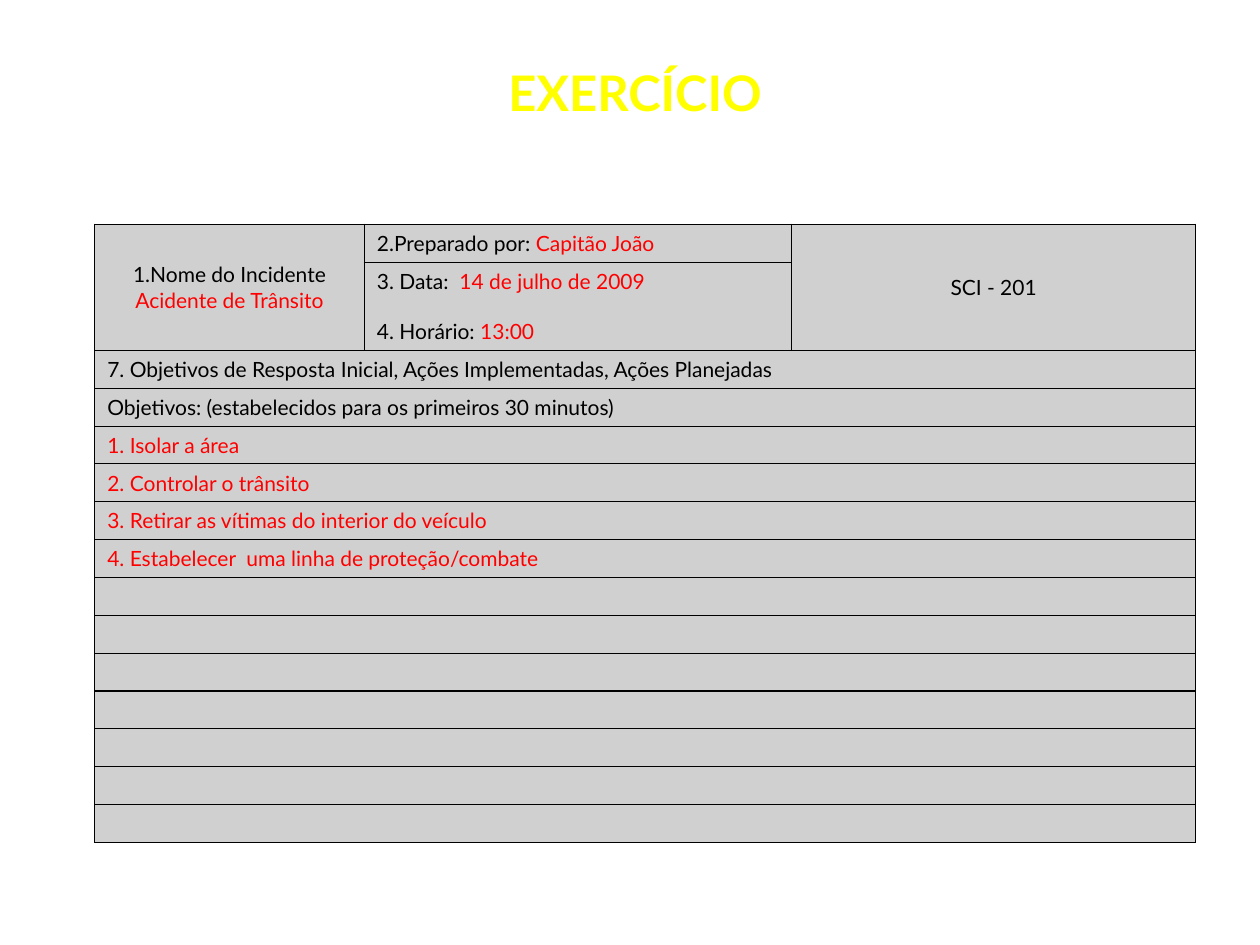
from lxml import etree
from pptx import Presentation
from pptx import util as u
from pptx.dml import color as dml
from pptx.enum import text
from pptx.oxml import ns

COLORS = {"title": "FFFF00", "label": "000000", "answer": "FF0000",
          "cell": "D0D0D0", "border": "000000"}
FONT = "Lato"
ROW_HEIGHT = 0.762
DATE_ROW_HEIGHT = 1.78
COLUMN_SHARES = (2.14, 3.39, 3.21)
ROW_COUNT = 15
HEADER_ROWS = 2

INCIDENT = [[("1.Nome do Incidente", "label")], [("Acidente de Trânsito", "answer")]]
AUTHOR = [[("2.Preparado por: ", "label"), ("Capitão João", "answer")]]
SCHEDULE = [[("3. Data:  ", "label"), ("14 de julho de 2009", "answer")],
            [("4. Horário: ", "label"), ("13:00", "answer")]]
FORM_CODE = [[("SCI - 201", "label")]]
BODY_LINES = [
    ("7. Objetivos de Resposta Inicial, Ações Implementadas, Ações Planejadas", "label"),
    ("Objetivos: (estabelecidos para os primeiros 30 minutos)", "label"),
    ("1. Isolar a área", "answer"),
    ("2. Controlar o trânsito", "answer"),
    ("3. Retirar as vítimas do interior do veículo", "answer"),
    ("4. Estabelecer  uma linha de proteção/combate", "answer"),
]


def add_run(paragraph, wording, size, role, bold=False):
    """Add one formatted run to a paragraph."""
    run = paragraph.add_run()
    run.text = wording
    run.font.name = FONT
    run.font.size = u.Pt(size)
    run.font.bold = bold
    run.font.color.rgb = dml.RGBColor.from_string(COLORS[role])


def style_cell(cell):
    """Give a cell its borders, grey fill and the text size of an empty line."""
    properties = cell._tc.get_or_add_tcPr()
    for side in ("lnL", "lnR", "lnT", "lnB"):
        line = etree.SubElement(properties, ns.qn(f"a:{side}"), w=str(u.Pt(0.75)))
        paint = etree.SubElement(line, ns.qn("a:solidFill"))
        etree.SubElement(paint, ns.qn("a:srgbClr"), val=COLORS["border"])
    cell.fill.solid()
    cell.fill.fore_color.rgb = dml.RGBColor.from_string(COLORS["cell"])
    ending = etree.SubElement(cell.text_frame.paragraphs[0]._p,
                              ns.qn("a:endParaRPr"), sz="1200")
    etree.SubElement(ending, ns.qn("a:latin"), typeface=FONT)


def write_cell(cell, lines, align=text.PP_ALIGN.LEFT, anchor=text.MSO_ANCHOR.MIDDLE, gap=0):
    """Write lines of coloured runs, with a gap in points between them."""
    cell.vertical_anchor = anchor
    for index, runs in enumerate(lines):
        frame = cell.text_frame
        paragraph = frame.add_paragraph() if index else frame.paragraphs[0]
        paragraph.alignment = align
        if index:
            paragraph.space_before = u.Pt(gap)
        for wording, role in runs:
            add_run(paragraph, wording, 12, role)


def place_title(slide, left, top, width, height):
    """Move the title placeholder into its box and write the heading."""
    title = slide.shapes.title
    title.left, title.top, title.width, title.height = map(u.Cm, (left, top, width, height))
    title.text_frame.auto_size = text.MSO_AUTO_SIZE.SHAPE_TO_FIT_TEXT
    heading = title.text_frame.paragraphs[0]
    heading.alignment = text.PP_ALIGN.CENTER
    add_run(heading, "EXERCÍCIO", 28, "title", bold=True)


def place_form(slide, left, top, width):
    """Build the incident form: a merged header above full-width lines."""
    height = DATE_ROW_HEIGHT + ROW_HEIGHT * (ROW_COUNT - 1)
    form = slide.shapes.add_table(ROW_COUNT, len(COLUMN_SHARES),
                                  *map(u.Cm, (left, top, width, height))).table
    form.first_row = form.horz_banding = False
    for column, share in zip(form.columns, COLUMN_SHARES):
        column.width = u.Cm(width * share / sum(COLUMN_SHARES))
    for index, row in enumerate(form.rows):
        row.height = u.Cm(DATE_ROW_HEIGHT if index == 1 else ROW_HEIGHT)
    for cell in form.iter_cells():
        style_cell(cell)

    for column in (0, 2):
        form.cell(0, column).merge(form.cell(HEADER_ROWS - 1, column))
    for row in range(HEADER_ROWS, ROW_COUNT):
        form.cell(row, 0).merge(form.cell(row, len(COLUMN_SHARES) - 1))

    write_cell(form.cell(0, 0), INCIDENT, text.PP_ALIGN.CENTER)
    write_cell(form.cell(0, 1), AUTHOR)
    write_cell(form.cell(0, 2), FORM_CODE, text.PP_ALIGN.CENTER)
    write_cell(form.cell(1, 1), SCHEDULE, gap=14.4)
    for row, line in enumerate(BODY_LINES, HEADER_ROWS):
        write_cell(form.cell(row, 0), [[line]], anchor=text.MSO_ANCHOR.TOP)


def main():
    """Create the exercise slide and save it."""
    deck = Presentation()
    deck.slide_width, deck.slide_height = u.Cm(25.4), u.Cm(19.05)
    slide = deck.slides.add_slide(deck.slide_layouts[5])
    place_title(slide, 4.9, 1.12, 15.8, 1.45)
    place_form(slide, 1.91, 4.52, 22.2)
    deck.save("out.pptx")


if __name__ == "__main__":
    main()
